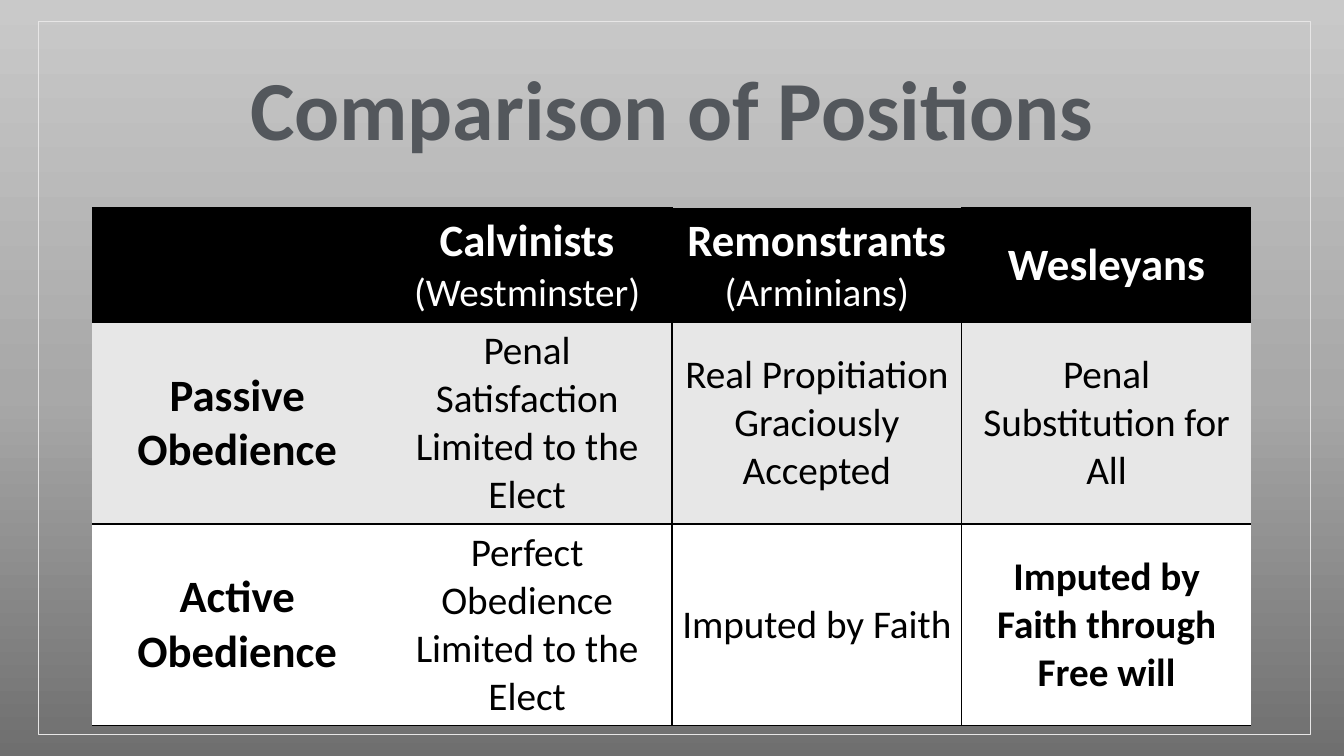
import copy
from dataclasses import dataclass

import pptx
import pptx.dml.color
import pptx.enum.shapes
import pptx.enum.text
import pptx.oxml
import pptx.oxml.ns
import pptx.util

Cm = pptx.util.Cm
Pt = pptx.util.Pt
qn = pptx.oxml.ns.qn
FONT = "Calibri"


@dataclass
class Piece:
    text: str
    size: int = 28
    bold: bool = False


@dataclass
class Position:
    paragraphs: list[list[Piece]]


@dataclass
class Band:
    height: float
    fill: str
    ink: str
    rule: int
    positions: list[Position]


def heading(text: str) -> Piece:
    return Piece(text, 32, True)


def single(piece: Piece) -> Position:
    return Position([[piece]])


BANDS = [
    Band(2.87, "000000", "FFFFFF", 2, [
        Position([]),
        Position([[heading("Calvinists "), Piece("(Westminster)")]]),
        Position([[heading("Remonstrants")], [Piece("(Arminians)")]]),
        single(heading("Wesleyans")),
    ]),
    Band(5.08, "E7E7E7", "000000", 1, [
        single(heading("Passive Obedience")),
        single(Piece("Penal Satisfaction Limited to the Elect")),
        single(Piece("Real Propitiation Graciously Accepted")),
        single(Piece("Penal Substitution for All")),
    ]),
    Band(5.08, "FFFFFF", "000000", 1, [
        single(heading("Active Obedience")),
        single(Piece("Perfect Obedience Limited to the Elect")),
        single(Piece("Imputed by Faith")),
        single(Piece("Imputed by Faith through Free will", bold=True)),
    ]),
]


def colour(value: str) -> pptx.dml.color.RGBColor:
    return pptx.dml.color.RGBColor.from_string(value)


def paint_background(slide, stops: list[tuple[int, str]]) -> None:
    fill = slide.background.fill
    fill.gradient()
    fill.gradient_angle = 90
    stop_list = next(slide.element.iter(qn("a:gsLst")))
    stop_list.append(copy.deepcopy(stop_list[-1]))
    for stop, (percent, shade) in zip(fill.gradient_stops, stops):
        stop.position = percent / 100
        stop.color.rgb = colour(shade)


def set_border(cell, side: str, width: int) -> None:
    tag = f"a:ln{side}"
    paint = '<a:solidFill><a:srgbClr val="000000"/></a:solidFill>' if width else "<a:noFill/>"
    cell._tc.get_or_add_tcPr().append(pptx.oxml.parse_xml(
        f'<{tag} {pptx.oxml.ns.nsdecls("a")} w="{Pt(width)}">{paint}</{tag}>'))


def write_position(cell, position: Position, ink: str) -> None:
    cell.vertical_anchor = pptx.enum.text.MSO_ANCHOR.MIDDLE
    frame = cell.text_frame
    for index, pieces in enumerate(position.paragraphs):
        paragraph = frame.add_paragraph() if index else frame.paragraphs[0]
        paragraph.alignment = pptx.enum.text.PP_ALIGN.CENTER
        paragraph.font.name = FONT
        paragraph.font.color.rgb = colour(ink)
        for piece in pieces:
            run = paragraph.add_run()
            run.text = piece.text
            font = run.font if len(pieces) > 1 else paragraph.font
            font.size = Pt(piece.size)
            font.bold = piece.bold


def add_comparison(slide) -> None:
    columns = len(BANDS[0].positions)
    table = slide.shapes.add_table(
        len(BANDS), columns, Cm(2.33), Cm(5.25), Cm(29.21),
        Cm(sum(band.height for band in BANDS))).table
    table.first_row = False
    table.horz_banding = False
    for row, band in enumerate(BANDS):
        table.rows[row].height = Cm(band.height)
        for column, position in enumerate(band.positions):
            cell = table.cell(row, column)
            set_border(cell, "L", 1 if column >= 2 else 0)
            set_border(cell, "R", 1 if 1 <= column < columns - 1 else 0)
            set_border(cell, "T", 1 if row or column == 2 else 2)
            set_border(cell, "B", band.rule)
            cell.fill.solid()
            cell.fill.fore_color.rgb = colour(band.fill)
            write_position(cell, position, band.ink)


def add_title(slide) -> None:
    title = slide.shapes.title
    title.left, title.top, title.width, title.height = Cm(2.33), Cm(1.01), Cm(29.21), Cm(3.68)
    title.text_frame.text = "Comparison of Positions"
    title.text_frame.vertical_anchor = pptx.enum.text.MSO_ANCHOR.MIDDLE
    paragraph = title.text_frame.paragraphs[0]
    paragraph.alignment = pptx.enum.text.PP_ALIGN.CENTER
    paragraph.line_spacing = 0.9
    paragraph.font.name = FONT
    paragraph.font.size = Pt(60)
    paragraph.font.bold = True
    paragraph.font.color.rgb = colour("53575C")


def add_frame(slide) -> None:
    frame = slide.shapes.add_shape(
        pptx.enum.shapes.MSO_SHAPE.RECTANGLE, Cm(0.97), Cm(0.55), Cm(32.05), Cm(17.97))
    frame.shadow.inherit = False
    frame.fill.background()
    frame.line.color.rgb = colour("E7E6E6")
    frame.line.width = Pt(0.75)


def main() -> None:
    presentation = pptx.Presentation()
    presentation.slide_width = Cm(33.87)
    presentation.slide_height = Cm(19.05)
    slide = presentation.slides.add_slide(presentation.slide_layouts[5])
    paint_background(slide, [(0, "6F6F6F"), (48, "A8A8A8"), (100, "C9C9C9")])
    add_title(slide)
    add_comparison(slide)
    add_frame(slide)
    presentation.save("out.pptx")


if __name__ == "__main__":
    main()
